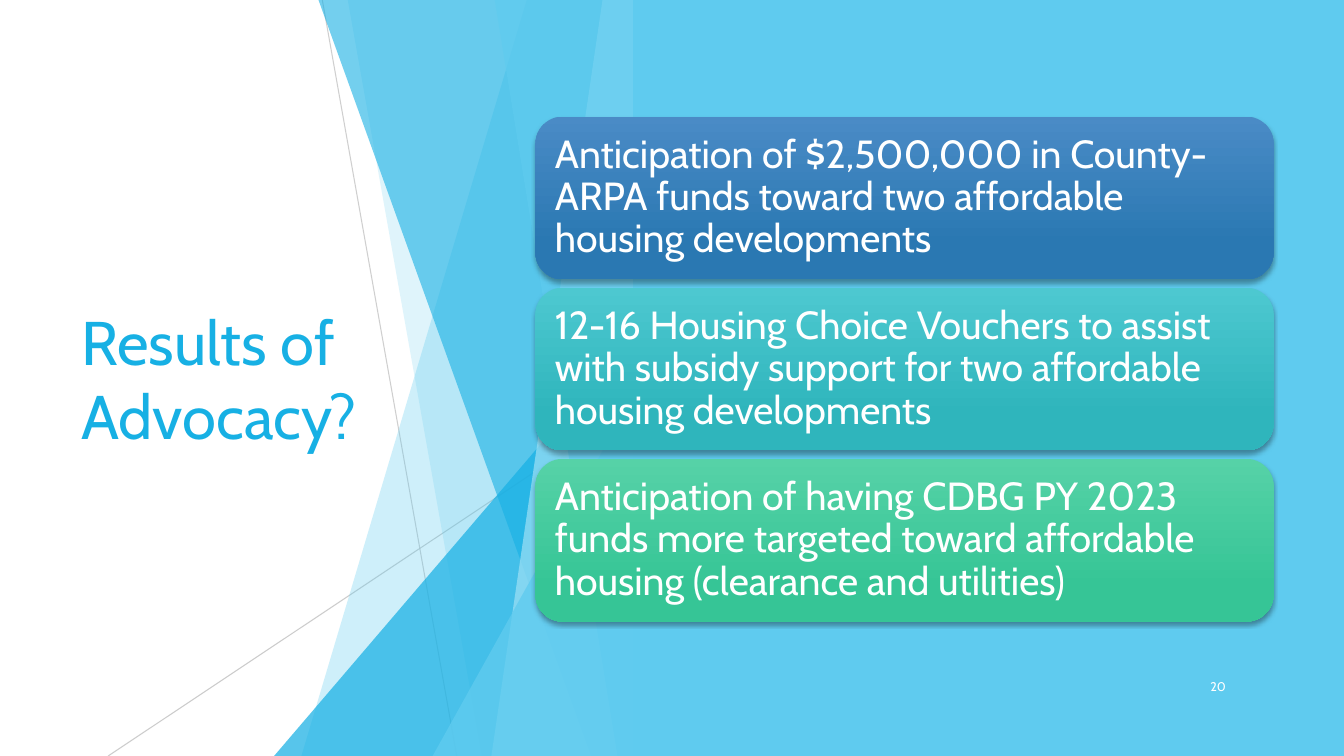
from lxml.etree import SubElement
from pptx import Presentation
from pptx.dml.color import RGBColor
from pptx.enum.shapes import MSO_CONNECTOR, MSO_SHAPE
from pptx.enum.text import MSO_ANCHOR, PP_ALIGN
from pptx.oxml.ns import qn
from pptx.util import Pt

PX = 9525
WIDE, HIGH, EDGE = 1280, 720, 603

theme = {
    "font": "Cabin",
    "title": 44, "body": 28, "page": 9,
    "white": "FFFFFF", "gray": "BFBFBF", "black": "000000",
    "sky": "5FCBEF", "blue": "17B0E4", "pale": "9FE0F5",
    "cards": [("4A8BC6", "2A78B2"), ("4DC8D0", "2FB5BC"), ("56D2A7", "36C596")],
}


def paint(shape, color, alpha=100):
    shape.shadow.inherit = False
    shape.fill.solid()
    shape.fill.fore_color.rgb = RGBColor.from_string(theme[color])
    shape.line.fill.background()
    for tint in shape.element.spPr.iter(qn("a:srgbClr")):
        SubElement(tint, qn("a:alpha"), val=str(alpha * 1000))


def write(shape, text, size, color, align=PP_ALIGN.LEFT):
    frame = shape.text_frame
    frame.word_wrap = True
    frame.vertical_anchor = MSO_ANCHOR.MIDDLE
    para = frame.paragraphs[0]
    para.text = text
    para.alignment = align
    para.font.name = theme["font"]
    para.font.size = Pt(theme[size])
    para.font.color.rgb = RGBColor.from_string(theme[color])
    return frame


deck = Presentation()
deck.slide_width, deck.slide_height = WIDE * PX, HIGH * PX
slide = deck.slides.add_slide(deck.slide_layouts[6])
shapes = slide.shapes

for x1, y1, x2, y2, alpha in [(307, 0, 435, 720, 75), (603, 387, 103, 720, 80)]:
    line = shapes.add_connector(MSO_CONNECTOR.STRAIGHT, x1 * PX, y1 * PX, x2 * PX, y2 * PX)
    line.line.width = Pt(0.75)
    line.line.color.rgb = RGBColor.from_string(theme["gray"])
    for tint in line.element.spPr.iter(qn("a:srgbClr")):
        SubElement(tint, qn("a:alpha"), val=str(alpha * 1000))
    SubElement(line.element.spPr, qn("a:effectLst"))

facets = [
    ("band", 502, 287, "sky", 30),
    ("band", 331, 459, "sky", 20),
    ("peak", 261, 320, "blue", 72),
    ("band", 303, 563, "blue", 60),
    ("band", 574, 468, "pale", 70),
    ("band", 471, 588, "sky", 65),
    ("peak", 412, 377, "sky", 80),
]
for kind, a, b, color, alpha in facets:
    if kind == "band":
        path = shapes.build_freeform(a, -1, scale=PX)
        path.add_line_segments([(EDGE, -1), (EDGE, HIGH), (b, HIGH)], close=True)
        facet = path.convert_to_shape()
    else:
        facet = shapes.add_shape(MSO_SHAPE.ISOSCELES_TRIANGLE, a * PX, b * PX,
                                 (EDGE - a) * PX, (HIGH - b) * PX)
        facet.adjustments[0] = 1
    paint(facet, color, alpha)

title = shapes.add_textbox(68 * PX, 145 * PX, 372 * PX, 430 * PX)
write(title, "Results of Advocacy?", "title", "blue")

panel = shapes.add_shape(MSO_SHAPE.RECTANGLE, EDGE * PX, 0, (WIDE - EDGE) * PX, HIGH * PX)
paint(panel, "sky")

page = shapes.add_textbox(1105 * PX, 635 * PX, 72 * PX, 38 * PX)
write(page, "20", "page", "white", PP_ALIGN.RIGHT)

notes = [
    "Anticipation of $2,500,000 in County-ARPA funds toward two affordable housing developments",
    "12-16 Housing Choice Vouchers to assist with subsidy support for two affordable housing developments",
    "Anticipation of having CDBG PY 2023 funds more targeted toward affordable housing (clearance and utilities)",
]
for row, (note, tones) in enumerate(zip(notes, theme["cards"])):
    card = shapes.add_shape(MSO_SHAPE.ROUNDED_RECTANGLE, 510 * PX, (111 + 163 * row) * PX,
                            703 * PX, 155 * PX)
    card.fill.gradient()
    card.fill.gradient_angle = 270
    for stop, tone, place in zip(card.fill.gradient_stops, tones, (0, 0.78)):
        stop.color.rgb = RGBColor.from_string(tone)
        stop.position = place
    card.line.fill.background()
    card.shadow.inherit = False
    glow = SubElement(card.element.spPr.find(qn("a:effectLst")), qn("a:outerShdw"),
                      blurRad=str(Pt(3)), dist=str(Pt(2)), dir="5400000", rotWithShape="0")
    tint = SubElement(glow, qn("a:srgbClr"), val=theme["black"])
    SubElement(tint, qn("a:alpha"), val="35000")
    frame = write(card, note, "body", "white")
    frame.margin_left = frame.margin_right = frame.margin_top = frame.margin_bottom = 11 * PX
    frame.paragraphs[0].line_spacing = 0.9

deck.save("out.pptx")
